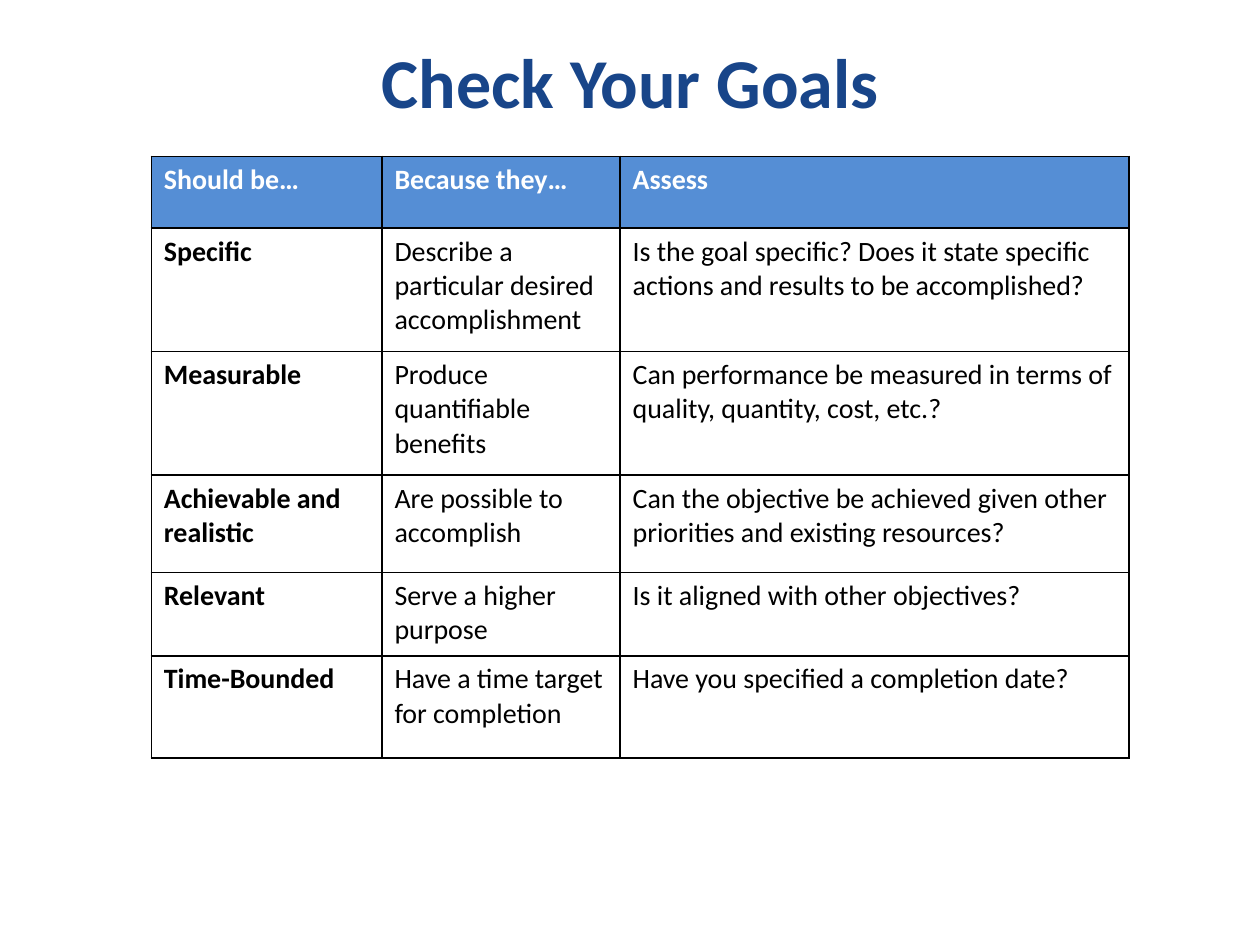
from lxml import etree
from pptx import Presentation
from pptx.dml.color import RGBColor
from pptx.enum.text import MSO_ANCHOR, PP_ALIGN
from pptx.oxml.ns import qn
from pptx.util import Cm, Pt

MIDDLE, TOP = MSO_ANCHOR.MIDDLE, MSO_ANCHOR.TOP
CENTER, LEFT = PP_ALIGN.CENTER, PP_ALIGN.LEFT

# Content
TITLE = "Check Your Goals"
ROWS = [
    ("Should be…", "Because they…", "Assess"),
    ("Specific", "Describe a particular desired accomplishment",
     "Is the goal specific? Does it state specific actions and results "
     "to be accomplished?"),
    ("Measurable", "Produce quantifiable benefits",
     "Can performance be measured in terms of quality, quantity, cost, etc.?"),
    ("Achievable and realistic", "Are possible to accomplish",
     "Can the objective be achieved given other priorities and existing "
     "resources?"),
    ("Relevant", "Serve a higher purpose",
     "Is it aligned with other objectives?"),
    ("Time-Bounded", "Have a time target for completion",
     "Have you specified a completion date?"),
]

# Theme and sizes in cm
THEME = {"font": "Calibri", "title": "184589", "head": "558ED5",
         "light": "FFFFFF", "dark": "000000", "big": 40, "body": 16}
WIDTHS = [4.65, 4.8, 10.26]
HEIGHTS = [1.45, 2.49, 2.49, 1.96, 1.68, 2.06]


def write(frame, text, size, color, bold, align):
    par = frame.paragraphs[0]
    par.alignment = align
    run = par.add_run()
    run.text = text
    font = run.font
    font.name, font.size, font.bold = THEME["font"], Pt(size), bold
    font.color.rgb = RGBColor.from_string(color)


def border(cell):
    props = cell._tc.get_or_add_tcPr()
    for side in ("lnL", "lnR", "lnT", "lnB"):
        line = etree.SubElement(props, qn("a:" + side), w=str(Pt(1)))
        fill = etree.SubElement(line, qn("a:solidFill"))
        etree.SubElement(fill, qn("a:srgbClr"), val=THEME["dark"])


deck = Presentation()
deck.slide_width, deck.slide_height = Cm(25.4), Cm(19.05)
slide = deck.slides.add_slide(deck.slide_layouts[5])

# Title
title = slide.shapes.title
title.left, title.top = Cm(1.5), Cm(0.76)
title.width, title.height = Cm(22.4), Cm(1.73)
title.text_frame.vertical_anchor = MIDDLE
write(title.text_frame, TITLE, THEME["big"], THEME["title"], True, CENTER)

# Goal table
table = slide.shapes.add_table(
    len(ROWS), len(WIDTHS), Cm(3.05), Cm(3.15),
    Cm(sum(WIDTHS)), Cm(sum(HEIGHTS))).table
table.horz_banding = False
for col, width in zip(table.columns, WIDTHS):
    col.width = Cm(width)
for row, height in zip(table.rows, HEIGHTS):
    row.height = Cm(height)

for r, texts in enumerate(ROWS):
    for c, text in enumerate(texts):
        cell = table.cell(r, c)
        cell.vertical_anchor = TOP
        border(cell)
        head = r == 0
        if head:
            cell.fill.solid()
            cell.fill.fore_color.rgb = RGBColor.from_string(THEME["head"])
        else:
            cell.fill.background()
        write(cell.text_frame, text, THEME["body"],
              THEME["light" if head else "dark"], head or c == 0, LEFT)

deck.save("out.pptx")
